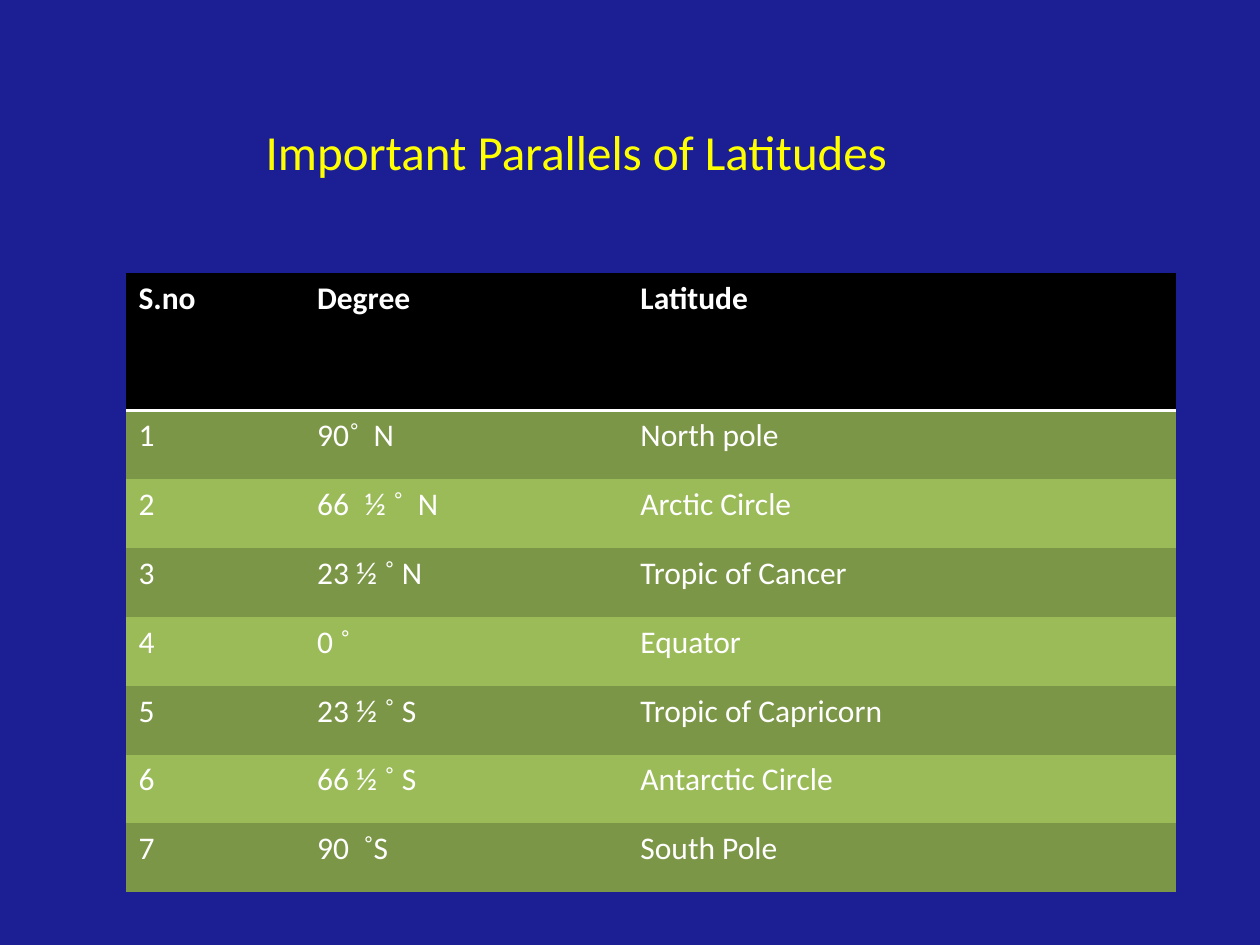
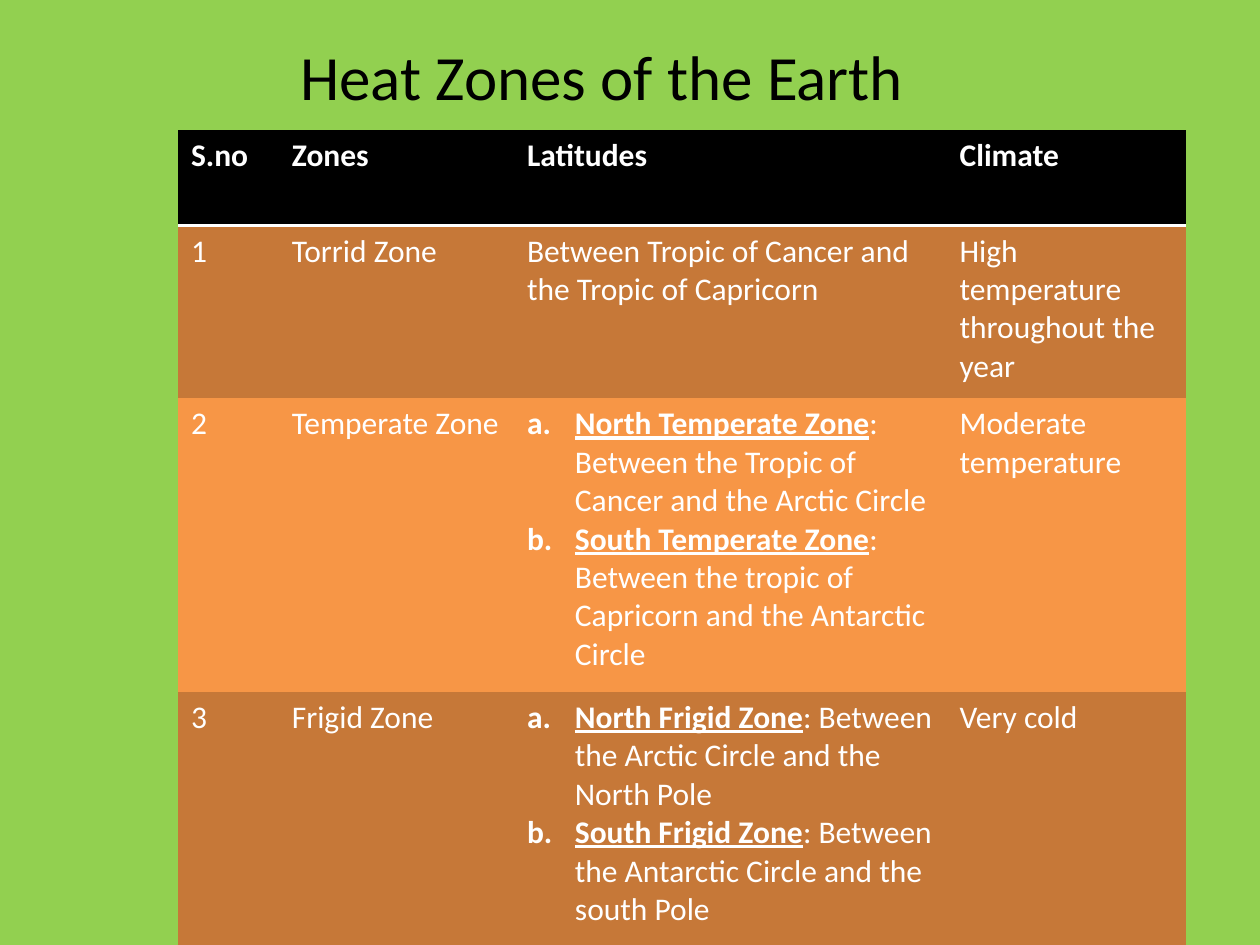
"""Build two slides of tables on the Earth's latitudes and heat zones."""
from dataclasses import dataclass

from lxml import etree
from pptx import Presentation
from pptx import util as u
from pptx.dml.color import RGBColor
from pptx.enum import text
from pptx.oxml import ns

COLORS = {
    "navy": "1C1F94", "lime": "92D050", "yellow": "FFFF00",
    "black": "000000", "white": "FFFFFF",
    "olive": "7C9647", "leaf": "9BBB59",
    "rust": "C67838", "orange": "F79646",
}
GRID_COLUMNS, GRID_ROWS = 120, 90
NO_STYLE = "{2D5ABB26-0587-4C30-8999-92F81FD0307C}"
DEGREE = "˚"


@dataclass
class Numbered:
    """A numbered list of (underlined term, explanation) pairs."""
    scheme: str
    items: list
    start: int = 1


class Deck:
    """Hold the shared style and the slide being built."""

    def __init__(self):
        """Open a 4:3 presentation."""
        self.prs = Presentation()
        self.prs.slide_width, self.prs.slide_height = u.Inches(10), u.Inches(7.5)
        self.slide = None

    def across(self, columns):
        """Turn grid columns into a length."""
        return round(self.prs.slide_width * columns / GRID_COLUMNS)

    def down(self, rows):
        """Turn grid rows into a length."""
        return round(self.prs.slide_height * rows / GRID_ROWS)

    def box(self, left, top, width, height):
        """Turn a grid box into four lengths."""
        return self.across(left), self.down(top), self.across(width), self.down(height)

    def paint(self, fill, color):
        """Make a fill solid in a named colour."""
        fill.solid()
        fill.fore_color.rgb = RGBColor.from_string(COLORS[color])

    def style(self, paragraph, size, color, bold=False):
        """Set the shared font on a paragraph."""
        font = paragraph.font
        font.name, font.size, font.bold = "Calibri", u.Pt(size), bold
        font.color.rgb = RGBColor.from_string(COLORS[color])

    def new_slide(self, background):
        """Start a slide that has a title only."""
        self.slide = self.prs.slides.add_slide(self.prs.slide_layouts[5])
        self.paint(self.slide.background.fill, background)

    def title(self, wording, place, inset, size, color):
        """Fill and place the title."""
        heading = self.slide.shapes.title
        heading.left, heading.top, heading.width, heading.height = self.box(*place)
        frame = heading.text_frame
        frame.text = wording
        frame.auto_size = text.MSO_AUTO_SIZE.NONE
        frame.vertical_anchor = text.MSO_ANCHOR.TOP
        frame.margin_left = self.across(inset)
        frame.paragraphs[0].alignment = text.PP_ALIGN.LEFT
        self.style(frame.paragraphs[0], size, color)

    def add_wording(self, paragraph, wording):
        """Add wording, with degree signs in a serif font."""
        before, sign, after = wording.partition(DEGREE)
        for part in filter(None, (before, sign, after)):
            run = paragraph.add_run()
            run.text = part
            if part == DEGREE:
                run.font.name = "Times New Roman"

    def number(self, paragraph, listing):
        """Give a paragraph a hanging automatic number."""
        props = paragraph._p.get_or_add_pPr()
        props.set("marL", str(u.Inches(0.38)))
        props.set("indent", str(-u.Inches(0.38)))
        mark = etree.Element(ns.qn("a:buAutoNum"), type=listing.scheme)
        if listing.start > 1:
            mark.set("startAt", str(listing.start))
        props.insert(0, mark)

    def fill_cell(self, cell, content, color, bold):
        """Put plain or numbered content into a cell."""
        self.paint(cell.fill, color)
        listing = content if isinstance(content, Numbered) else None
        items = listing.items if listing else [("", content)]
        for position, (term, wording) in enumerate(items):
            frame = cell.text_frame
            paragraph = frame.add_paragraph() if position else frame.paragraphs[0]
            self.style(paragraph, 18, "white", bold)
            if listing:
                self.number(paragraph, listing)
            if term:
                run = paragraph.add_run()
                run.text, run.font.bold, run.font.underline = term, True, True
            self.add_wording(paragraph, wording)

    def underline_header(self, cell):
        """Draw the white rule below a header cell."""
        line = etree.Element(ns.qn("a:lnB"), w=str(u.Pt(2)))
        fill = etree.SubElement(line, ns.qn("a:solidFill"))
        etree.SubElement(fill, ns.qn("a:srgbClr"), val=COLORS["white"])
        cell._tc.get_or_add_tcPr().insert(0, line)

    def table(self, left, top, widths, heights, records, bands):
        """Add a table with a black header and alternating bands."""
        place = self.box(left, top, sum(widths), sum(heights))
        frame = self.slide.shapes.add_table(len(heights), len(widths), *place)
        grid = frame.table
        grid._tbl.tblPr.find(ns.qn("a:tableStyleId")).text = NO_STYLE
        for column, width in zip(grid.columns, widths):
            column.width = self.across(width)
        for index, (row, height, record) in enumerate(zip(grid.rows, heights, records)):
            row.height = self.down(height)
            color = bands[(index - 1) % 2] if index else "black"
            for cell, content in zip(row.cells, record):
                self.fill_cell(cell, content, color, bold=index == 0)
                if index == 0:
                    self.underline_header(cell)


LATITUDES = [
    ("S.no", "Degree", "Latitude"),
    ("1", "90˚  N", "North pole"),
    ("2", Numbered("arabicPlain", [("", "½ ˚  N")], 66), "Arctic Circle"),
    ("3", "23 ½ ˚ N", "Tropic of Cancer"),
    ("4", "0 ˚", "Equator"),
    ("5", "23 ½ ˚ S", "Tropic of Capricorn"),
    ("6", "66 ½ ˚ S", "Antarctic Circle"),
    ("7", "90  ˚S", "South Pole"),
]
HEAT_ZONES = [
    ("S.no", "Zones", "Latitudes", "Climate"),
    ("1", "Torrid Zone", "Between Tropic of Cancer and the Tropic of Capricorn",
     "High temperature throughout the year"),
    ("2", "Temperate Zone", Numbered("alphaLcPeriod", [
        ("North Temperate Zone", ": Between the Tropic of Cancer and the Arctic Circle"),
        ("South Temperate Zone", ": Between the tropic of Capricorn and the Antarctic Circle"),
    ]), "Moderate temperature"),
    ("3", "Frigid Zone", Numbered("alphaLcPeriod", [
        ("North Frigid Zone", ": Between the Arctic Circle and the North Pole"),
        ("South Frigid Zone", ": Between the Antarctic Circle and the south Pole"),
    ]), "Very cold"),
]


def main():
    """Build both slides and save them."""
    deck = Deck()

    deck.new_slide("navy")
    deck.title("Important Parallels of Latitudes", (19, 11, 72, 6.8), 6.3, 28, "yellow")
    band = 59 / 9
    deck.table(12, 26, (17, 30.8, 52.2), [2 * band] + [band] * 7,
               LATITUDES, ("olive", "leaf"))

    deck.new_slide("lime")
    deck.title("Heat Zones of the Earth", (21, 3, 94, 8.5), 7.6, 36, "black")
    deck.table(17, 12.4, (9.6, 22.4, 41.2, 22.8), (9.1, 16.45, 27.95, 24.1),
               HEAT_ZONES, ("rust", "orange"))

    deck.prs.save("out.pptx")


if __name__ == "__main__":
    main()
